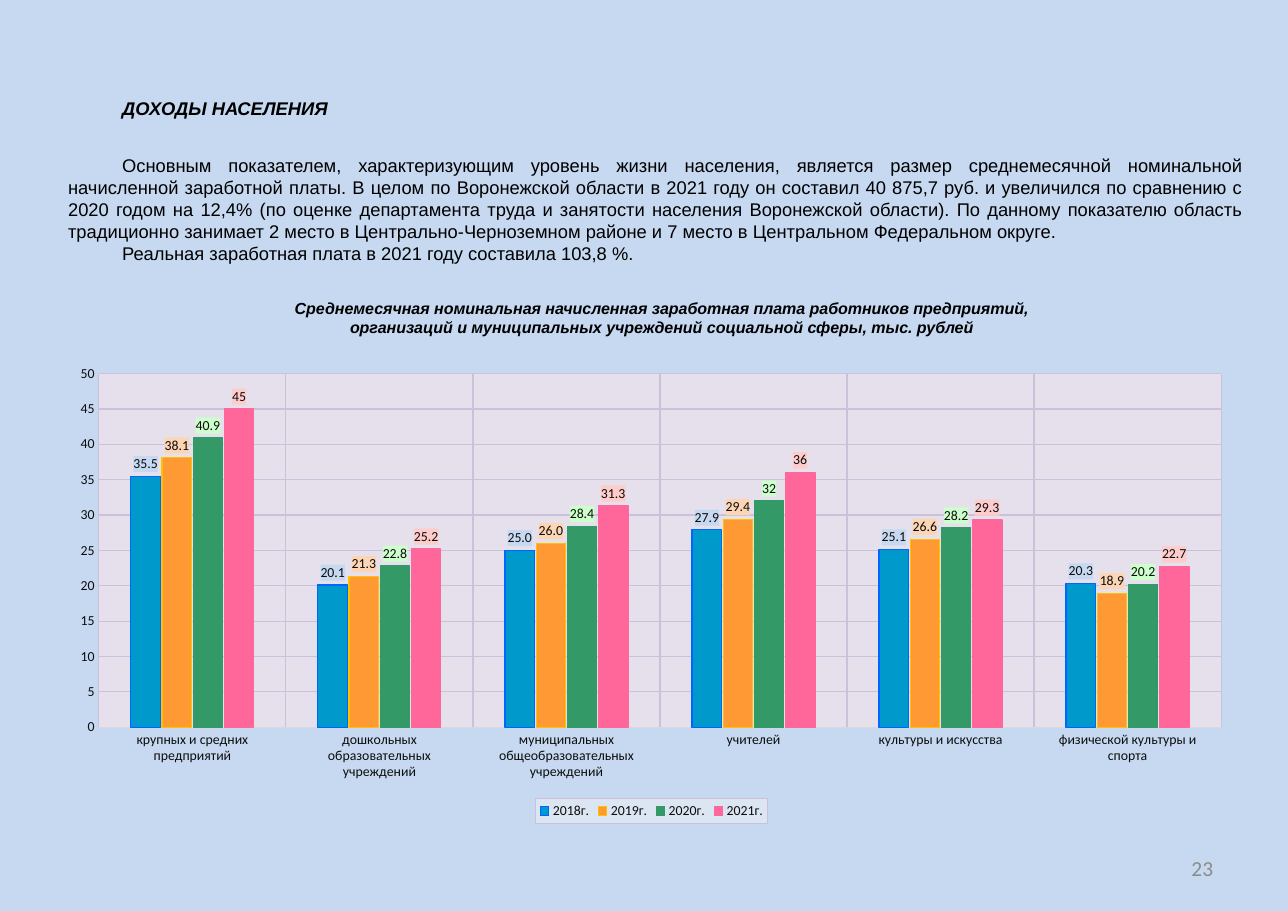
from dataclasses import dataclass

from pptx import Presentation
from pptx import util as u
from pptx.chart import data as chart_data
from pptx.dml import color
from pptx.enum import chart as chart_enum
from pptx.enum import text
from pptx.oxml import ns, parse_xml

COLORS = {
    "background": "C6D9F1",
    "black": "000000",
    "page_number": "8C8C8C",
    "chart_text": "0D0D0D",
    "grid": "CCC1DA",
    "axis": "D9D9D9",
    "plot": "E6E0EC",
    "legend": "DCE6F2",
}
ALIGN = text.PP_ALIGN
ANCHOR = text.MSO_ANCHOR


@dataclass
class TextBlock:
    left: float
    top: float
    width: float
    height: float
    lines: list[str]
    size: float = 12
    align: ALIGN = ALIGN.LEFT
    anchor: ANCHOR = ANCHOR.TOP
    indent: float = 0
    emphasis: bool = False
    font: str = "Arial"
    color: str = "black"


@dataclass
class YearSeries:
    name: str
    values: list[float]
    fill: str
    outline: str
    label_fill: str
    label_format: str


BLOCKS = [
    TextBlock(8.38, 7.66, 2.73, 0.44, ["23"], 14, ALIGN.RIGHT, ANCHOR.MIDDLE,
              font="Calibri", color="page_number"),
    TextBlock(0.52, 0.83, 10.97, 0.3, ["ДОХОДЫ НАСЕЛЕНИЯ"],
              anchor=ANCHOR.MIDDLE, indent=0.49, emphasis=True),
    TextBlock(0.52, 1.35, 10.87, 1.31, [
        "Основным показателем, характеризующим уровень жизни населения, является размер "
        "среднемесячной номинальной начисленной заработной платы. В целом по Воронежской "
        "области в 2021 году он составил 40 875,7 руб. и увеличился по сравнению с 2020 "
        "годом на 12,4% (по оценке департамента труда и занятости населения Воронежской "
        "области). По данному показателю область традиционно занимает 2 место в "
        "Центрально-Черноземном районе и 7 место в Центральном Федеральном округе.",
        "Реальная заработная плата в 2021 году составила 103,8 %.",
    ], align=ALIGN.JUSTIFY, indent=0.49),
    TextBlock(1.52, 2.66, 8.98, 0.45, [
        "Среднемесячная номинальная начисленная заработная плата работников предприятий,",
        "организаций и муниципальных учреждений социальной сферы, тыс. рублей",
    ], 10.5, ALIGN.CENTER, emphasis=True),
]

CATEGORIES = [
    "крупных и средних предприятий",
    "дошкольных образовательных учреждений",
    "муниципальных общеобразовательных учреждений",
    "учителей",
    "культуры и искусства",
    "физической культуры и спорта",
]
YEARS = [
    YearSeries("2018г.", [35.5, 20.1, 25, 27.9, 25.1, 20.3],
               "0099CC", "0066FF", "C6D9F1", "0.0"),
    YearSeries("2019г.", [38.1, 21.3, 26, 29.4, 26.6, 18.9],
               "FF9933", "FFC000", "FCD5B5", "0.0"),
    YearSeries("2020г.", [40.9, 22.8, 28.4, 32, 28.2, 20.2],
               "339966", "339966", "CCFFCC", "General"),
    YearSeries("2021г.", [45, 25.2, 31.3, 36, 29.3, 22.7],
               "FF6699", "FF6699", "FFCCCC", "General"),
]


def rgb(value: str) -> color.RGBColor:
    return color.RGBColor.from_string(value)


def style_font(font, name: str, size: float, value: str) -> None:
    font.name = name
    font.size = u.Pt(size)
    font.color.rgb = rgb(value)


def style_line(line, value: str) -> None:
    line.color.rgb = rgb(value)
    line.width = u.Pt(0.75)


def area_format(fill: str, outline: str = ""):
    line = (f'<a:ln w="9525"><a:solidFill><a:srgbClr val="{outline}"/></a:solidFill></a:ln>'
            if outline else "<a:ln><a:noFill/></a:ln>")
    return parse_xml(
        f'<c:spPr {ns.nsdecls("c", "a")}><a:solidFill><a:srgbClr val="{fill}"/>'
        f"</a:solidFill>{line}</c:spPr>"
    )


def add_text(page, block: TextBlock) -> None:
    box = page.shapes.add_textbox(*map(u.Inches, (block.left, block.top, block.width, block.height)))
    frame = box.text_frame
    frame.word_wrap = True
    frame.vertical_anchor = block.anchor
    for index, line in enumerate(block.lines):
        para = frame.add_paragraph() if index else frame.paragraphs[0]
        para.alignment = block.align
        if block.indent:
            properties = para._p.get_or_add_pPr()
            properties.set("marL", "0")
            properties.set("indent", str(u.Inches(block.indent)))
        span = para.add_run()
        span.text = line
        style_font(span.font, block.font, block.size, COLORS[block.color])
        span.font.bold = span.font.italic = block.emphasis


def style_axis(axis) -> None:
    axis.major_tick_mark = axis.minor_tick_mark = chart_enum.XL_TICK_MARK.NONE
    axis.has_major_gridlines = True
    style_line(axis.major_gridlines.format.line, COLORS["grid"])
    style_font(axis.tick_labels.font, "Calibri", 9, COLORS["chart_text"])


def style_series(series, year: YearSeries) -> None:
    series.smooth = False if hasattr(series, "smooth") else None
    series.format.fill.solid()
    series.format.fill.fore_color.rgb = rgb(year.fill)
    style_line(series.format.line, year.outline)
    labels = series.data_labels
    labels.show_value = True
    labels.position = chart_enum.XL_LABEL_POSITION.OUTSIDE_END
    labels.number_format = year.label_format
    labels.number_format_is_linked = False
    style_font(labels.font, "Calibri", 9, COLORS["chart_text"])
    labels._element.find(ns.qn("c:txPr")).addprevious(area_format(year.label_fill))


def style_plot_area(area) -> None:
    for layout in area.findall(ns.qn("c:layout")):
        area.remove(layout)
    places = {"x": 0.035, "y": 0.036, "w": 0.944, "h": 0.758}
    modes = "".join(f'<c:{side}Mode val="edge"/>' for side in "xy")
    sizes = "".join(f'<c:{side} val="{share}"/>' for side, share in places.items())
    area.insert(0, parse_xml(
        f'<c:layout {ns.nsdecls("c")}><c:manualLayout><c:layoutTarget val="inner"/>'
        f"{modes}{sizes}</c:manualLayout></c:layout>"
    ))
    area.append(area_format(COLORS["plot"]))


def add_wage_chart(page) -> None:
    data = chart_data.CategoryChartData()
    data.categories = CATEGORIES
    for year in YEARS:
        data.add_series(year.name, year.values)
    chart = page.shapes.add_chart(
        chart_enum.XL_CHART_TYPE.COLUMN_CLUSTERED,
        *map(u.Inches, (0.52, 3.24, 10.79, 4.24)), data,
    ).chart
    chart.has_title = False
    style_font(chart.font, "Calibri", 10, COLORS["black"])
    plot = chart.plots[0]
    plot.vary_by_categories = False
    plot.gap_width, plot.overlap = 216, -5
    for series, year in zip(plot.series, YEARS):
        style_series(series, year)
    for axis in (chart.category_axis, chart.value_axis):
        style_axis(axis)
    style_line(chart.category_axis.format.line, COLORS["axis"])
    values = chart.value_axis
    values.format.line.fill.background()
    values.minimum_scale, values.maximum_scale, values.major_unit = 0, 50, 5
    values.tick_labels.number_format = "General"
    values.tick_labels.number_format_is_linked = False
    chart.has_legend = True
    legend = chart.legend
    legend.position = chart_enum.XL_LEGEND_POSITION.BOTTOM
    legend.include_in_layout = False
    style_font(legend.font, "Calibri", 9, COLORS["chart_text"])
    legend._element.find(ns.qn("c:txPr")).addprevious(area_format(COLORS["legend"], COLORS["grid"]))
    style_plot_area(chart._chartSpace.chart.plotArea)


def main() -> None:
    deck = Presentation()
    deck.slide_width, deck.slide_height = u.Inches(11.69), u.Inches(8.27)
    page = deck.slides.add_slide(deck.slide_layouts[6])
    page.background.fill.solid()
    page.background.fill.fore_color.rgb = rgb(COLORS["background"])
    add_wage_chart(page)
    for block in BLOCKS:
        add_text(page, block)
    deck.save("out.pptx")


if __name__ == "__main__":
    main()
